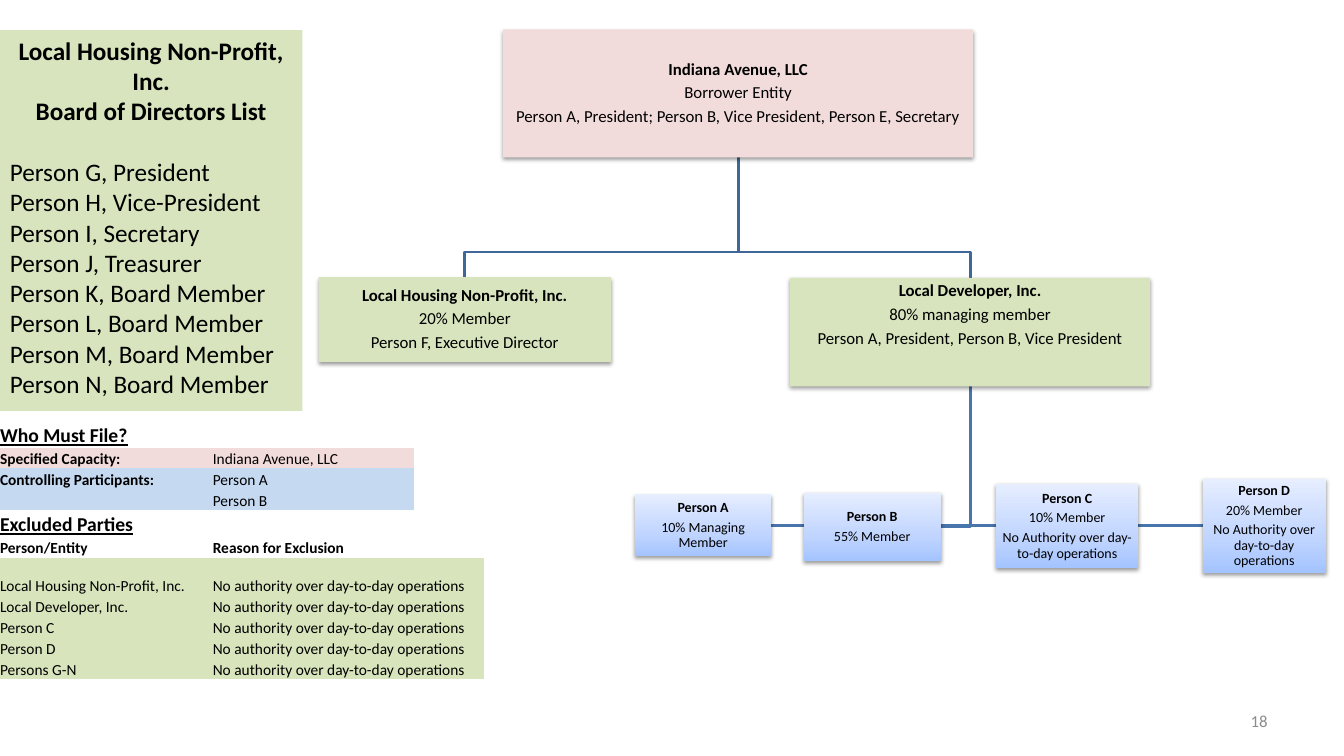
from copy import deepcopy
from lxml import etree
from pptx import Presentation
from pptx.dml.color import RGBColor
from pptx.enum import shapes, text
from pptx.oxml.ns import qn
from pptx.util import Pt

BLACK = RGBColor(0x00, 0x00, 0x00)
GREY = RGBColor(0x8C, 0x8C, 0x8C)
PINK = RGBColor(0xF2, 0xDC, 0xDB)
GREEN = RGBColor(0xD7, 0xE4, 0xBD)
TABLE_GREEN = RGBColor(0xD8, 0xE4, 0xBC)
TABLE_BLUE = RGBColor(0xC5, 0xD9, 0xF1)
OWNER_LINE = RGBColor(0x3F, 0x67, 0x97)
MEMBER_LINE = RGBColor(0x48, 0x75, 0xAC)
MEMBER_STOPS = [(0, RGBColor(0xA4, 0xC4, 0xFF)),
                (0.35, RGBColor(0xBF, 0xD4, 0xFF)),
                (1, RGBColor(0xE6, 0xEE, 0xFF))]
NO_STYLE = "{2D5ABB26-0587-4C30-8999-92F81FD0307C}"

deck = Presentation()
deck.slide_width, deck.slide_height = Pt(960), Pt(540)
page = deck.slides.add_slide(deck.slide_layouts[6])


def add_span(para, words, size, bold=False, color=BLACK, underline=False):
    span = para.add_run()
    span.text = words
    span.font.name = "Calibri"
    span.font.size = Pt(size)
    span.font.bold = bold
    span.font.underline = underline
    span.font.color.rgb = color


def add_panel(left, top, width, height, color):
    """Add a borderless rectangle, with the member gradient if color is None."""
    box = page.shapes.add_shape(shapes.MSO_SHAPE.RECTANGLE,
                                Pt(left), Pt(top), Pt(width), Pt(height))
    box.shadow.inherit = False
    box.line.fill.background()
    box.text_frame.word_wrap = True
    if color is not None:
        box.fill.solid()
        box.fill.fore_color.rgb = color
        return box
    box.fill.gradient()
    box.fill.gradient_angle = 90
    stop_list = box._element.spPr.find(".//" + qn("a:gsLst"))
    stop_list.insert(1, deepcopy(stop_list[0]))
    for stop, (position, shade) in zip(box.fill.gradient_stops, MEMBER_STOPS):
        stop.position = position
        stop.color.rgb = shade
    return box


# Page number
box = page.shapes.add_textbox(Pt(688.5), Pt(500.5), Pt(224), Pt(28.75))
box.text_frame.word_wrap = True
box.text_frame.vertical_anchor = text.MSO_ANCHOR.MIDDLE
para = box.text_frame.paragraphs[0]
para.alignment = text.PP_ALIGN.RIGHT
add_span(para, "18", 12, color=GREY)

# Organisation chart: place, fill, text size, lines
entities = {
    "borrower": ((359.5, 21, 335.5, 91.5), PINK, 12,
                 ["Indiana Avenue, LLC", "Borrower Entity",
                  "Person A, President; Person B, Vice President, Person E, Secretary"]),
    "non-profit": ((227.5, 198, 209, 60.5), GREEN, 12,
                   ["Local Housing Non-Profit, Inc.", "20% Member",
                    "Person F, Executive Director"]),
    "developer": ((564.5, 198.5, 257, 77.5), GREEN, 12,
                  ["Local Developer, Inc.", "80% managing member",
                   "Person A, President, Person B, Vice President"]),
    "A": ((453.5, 353, 97.5, 44.5), None, 10, ["Person A", "10% Managing Member"]),
    "B": ((574, 352, 98, 48.5), None, 10, ["Person B", "55% Member"]),
    "D": ((859, 342, 88, 67), None, 10,
          ["Person D", "20% Member", "No Authority over day-to-day operations"]),
    "C": ((711.5, 345.5, 101.5, 60.5), None, 10,
          ["Person C", "10% Member", "No Authority over day-to-day operations"]),
}

routes = []
developer_left, developer_top, developer_width, developer_height = entities["developer"][0]
trunk = developer_left + developer_width / 2
for name in "CDBA":
    left, top, width, height = entities[name][0]
    side = left if left > trunk else left + width
    middle = top + height / 2
    routes.append((MEMBER_LINE, [(trunk, developer_top + developer_height),
                                 (trunk, middle), (side, middle)]))
left, top, width, height = entities["borrower"][0]
stem, base, bend = left + width / 2, top + height, 180
for name in ("developer", "non-profit"):
    left, top, width, height = entities[name][0]
    centre = left + width / 2
    routes.append((OWNER_LINE, [(stem, base), (stem, bend), (centre, bend), (centre, top)]))

for color, points in routes:
    start, *rest = [(Pt(x), Pt(y)) for x, y in points]
    builder = page.shapes.build_freeform(*start)
    builder.add_line_segments(rest, close=False)
    route = builder.convert_to_shape()
    route.shadow.inherit = False
    route.fill.background()
    route.line.color.rgb = color
    route.line.width = Pt(2)

for name, (place, color, size, lines) in entities.items():
    box = add_panel(*place, color)
    effects = box._element.spPr.find(qn("a:effectLst"))
    shadow = etree.SubElement(effects, qn("a:outerShdw"), blurRad=str(Pt(3.1)),
                              dist=str(Pt(1.6)), dir="5400000", rotWithShape="0")
    shade = etree.SubElement(shadow, qn("a:srgbClr"), val="000000")
    etree.SubElement(shade, qn("a:alpha"), val="38000")
    frame = box.text_frame
    frame.margin_left = frame.margin_right = Pt(0.7)
    frame.margin_top = frame.margin_bottom = Pt(0.7)
    frame.vertical_anchor = text.MSO_ANCHOR.MIDDLE
    if name == "developer":
        frame.vertical_anchor = text.MSO_ANCHOR.TOP
        frame.margin_top = Pt(3)
    for index, words in enumerate(lines):
        para = frame.add_paragraph() if index else frame.paragraphs[0]
        para.alignment = text.PP_ALIGN.CENTER
        para.line_spacing = 0.9
        para.space_after = Pt(size * 0.34)
        add_span(para, words, size, bold=index == 0)

# Board of directors
headings = ["Local Housing Non-Profit, Inc.", "Board of Directors List"]
directors = ["Person G, President", "Person H, Vice-President", "Person I, Secretary",
             "Person J, Treasurer"] + [f"Person {letter}, Board Member" for letter in "KLMN"]
box = add_panel(0, 21.5, 216, 272, GREEN)
box.text_frame.vertical_anchor = text.MSO_ANCHOR.TOP
for index, words in enumerate(headings + directors):
    para = box.text_frame.add_paragraph() if index else box.text_frame.paragraphs[0]
    heading = index < len(headings)
    para.alignment = text.PP_ALIGN.CENTER if heading else text.PP_ALIGN.LEFT
    if index == len(headings):
        para.space_before = Pt(22)
    add_span(para, words, 18, bold=heading)

# Filing table: height, label, value, fill, filled columns, last merged column, bold columns
REASON = "No authority over day-to-day operations"
rows = [
    (19, "Who Must File?", "", None, 0, 0, 1),
    (14.6, "Specified Capacity:", "Indiana Avenue, LLC", PINK, 4, 3, 1),
    (15, "Controlling Participants:", "Person A", TABLE_BLUE, 4, 0, 1),
    (15, "", "Person B", TABLE_BLUE, 4, 0, 0),
    (19, "Excluded Parties", "", None, 0, 0, 1),
    (15, "Person/Entity", "Reason for Exclusion", None, 0, 3, 2),
]
excluded = ["Local Housing Non-Profit, Inc.", "Local Developer, Inc.",
            "Person C", "Person D", "Persons G-N"]
rows += [(15 if index else 26.7, party, REASON, TABLE_GREEN, 5, 4, 0)
         for index, party in enumerate(excluded)]
widths = [152, 48, 48, 48, 50]

frame = page.shapes.add_table(len(rows), len(widths), Pt(0), Pt(301), Pt(sum(widths)),
                              Pt(sum(row[0] for row in rows)))
table = frame.table
table.first_row = table.horz_banding = False
table._tbl.tblPr.find(qn("a:tableStyleId")).text = NO_STYLE
for column, width in zip(table.columns, widths):
    column.width = Pt(width)

for r, (height, label, value, color, filled, merged, bold) in enumerate(rows):
    table.rows[r].height = Pt(height)
    section = height == 19
    for c, words in enumerate([label, value, "", "", ""]):
        cell = table.cell(r, c)
        cell.margin_left = cell.margin_right = cell.margin_top = cell.margin_bottom = 0
        cell.vertical_anchor = text.MSO_ANCHOR.BOTTOM
        if c < filled:
            cell.fill.solid()
            cell.fill.fore_color.rgb = color
        else:
            cell.fill.background()
        para = cell.text_frame.paragraphs[0]
        if words:
            add_span(para, words, 14 if section else 11, bold=c < bold, underline=section)
        else:
            etree.SubElement(para._p, qn("a:endParaRPr"), sz="1100")
    if merged:
        table.cell(r, 1).merge(table.cell(r, merged))

deck.save("out.pptx")
